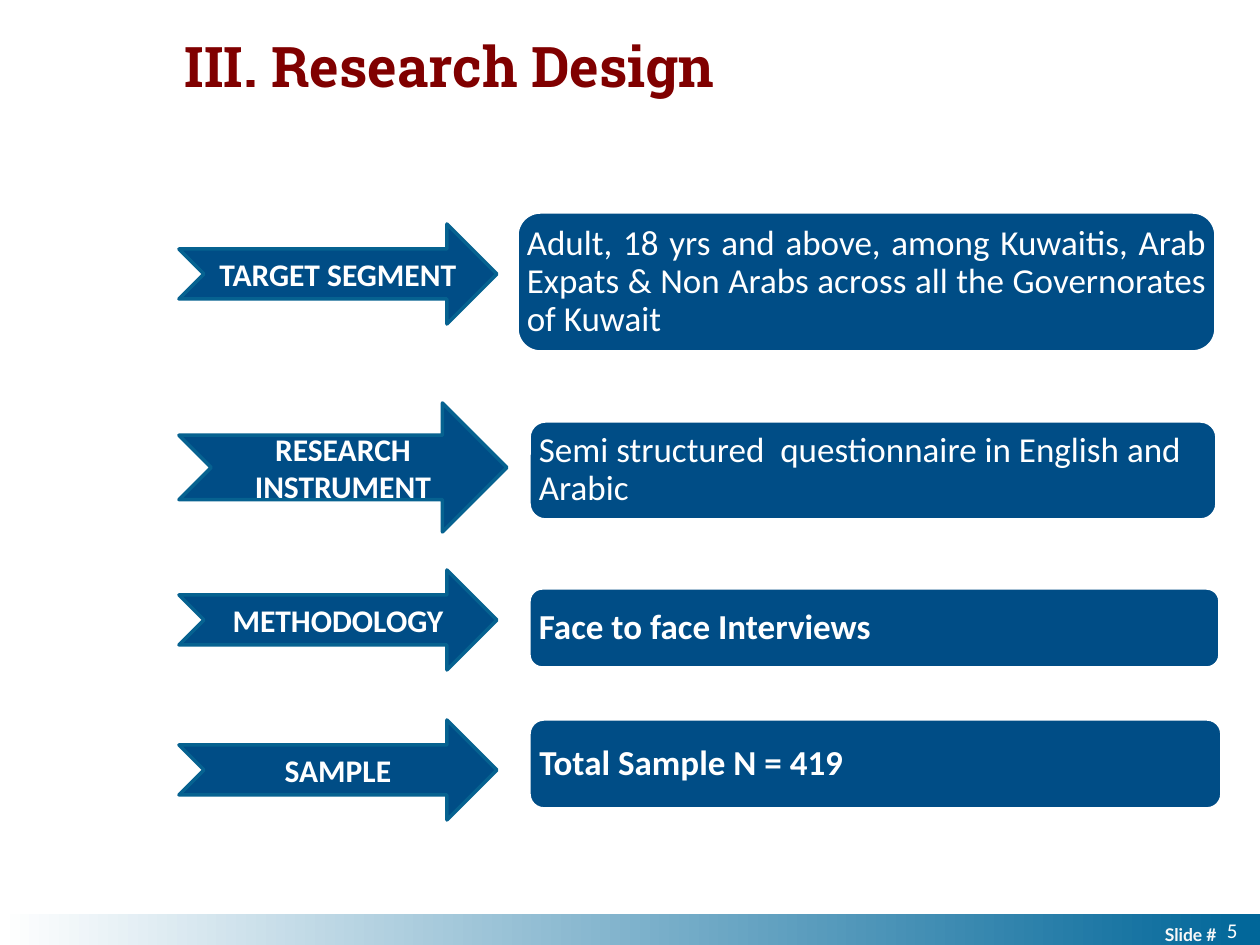
from lxml import etree
from pptx import Presentation
from pptx import util as u
from pptx.dml.color import RGBColor
from pptx.enum import shapes, text
from pptx.oxml.ns import qn

WHITE = RGBColor(255, 255, 255)
PALE = RGBColor(0xF8, 0xF8, 0xF8)
NAVY = RGBColor(0x00, 0x4D, 0x86)
EDGE = RGBColor(0x06, 0x62, 0x90)
TEAL = RGBColor(0x00, 0x66, 0x99)
RED = RGBColor(0x80, 0, 0)
SCALE = 914400 / 126
SHAPE = shapes.MSO_SHAPE
ALIGN = text.PP_ALIGN
MID = text.MSO_ANCHOR.MIDDLE
BASE = text.MSO_ANCHOR.BOTTOM
TOP = text.MSO_ANCHOR.TOP

ROWS = [
    ((179, 224, 318, 100), "TARGET SEGMENT", (517, 212, 699, 140),
     "Adult, 18 yrs and above, among Kuwaitis, Arab Expats & Non Arabs "
     "across all the Governorates of Kuwait", False, ALIGN.JUSTIFY),
    ((179, 403, 328, 129), "RESEARCH INSTRUMENT", (529, 421, 688, 99),
     "Semi structured  questionnaire in English and Arabic", False, ALIGN.LEFT),
    ((179, 570, 318, 100), "METHODOLOGY", (529, 588, 691, 80),
     "Face to face Interviews", True, ALIGN.LEFT),
    ((179, 720, 318, 100), "SAMPLE", (529, 719, 693, 90),
     "Total Sample N = 419", True, ALIGN.LEFT),
]


def px(n):
    return u.Emu(round(n * SCALE))


def write(shape, words, size, color, align, bold=False, face="Calibri",
          anchor=MID, wrap=True):
    frame = shape.text_frame
    frame.word_wrap = wrap
    frame.vertical_anchor = anchor
    para = frame.paragraphs[0]
    para.text = words
    para.alignment = align
    font = para.font
    font.name, font.size, font.bold = face, u.Pt(size), bold
    font.color.rgb = color
    return para


def block(slide, kind, box, line):
    shape = slide.shapes.add_shape(kind, *map(px, box))
    shape.shadow.inherit = False
    shape.fill.solid()
    shape.fill.fore_color.rgb = NAVY
    shape.line.color.rgb = line
    shape.line.width = u.Pt(2)
    return shape


def label(slide, box, *words, **style):
    shape = slide.shapes.add_textbox(*map(px, box))
    return shape, write(shape, *words, **style)


def title(slide, box):
    _, para = label(slide, box, "III. Research Design", 32, RED, ALIGN.CENTER,
                    bold=True, face="Roboto Slab", anchor=TOP)
    props = para.runs[0].font._element if hasattr(para.runs[0].font, "_element") \
        else para.runs[0]._r.get_or_add_rPr()
    glow = etree.SubElement(props, qn("a:effectLst"))
    cast = etree.SubElement(glow, qn("a:outerShdw"), dist="38100", dir="2700000")
    etree.SubElement(cast, qn("a:srgbClr"), val="EEECE1")


def row(slide, arrow, name, panel, words, bold, align):
    shape = block(slide, SHAPE.NOTCHED_RIGHT_ARROW, arrow, EDGE)
    write(shape, name, 18, WHITE, ALIGN.CENTER, bold=True)
    shape = block(slide, SHAPE.ROUNDED_RECTANGLE, panel, WHITE)
    para = write(shape, words, 20, WHITE, align, bold=bold)
    para.line_spacing = 0.9
    frame = shape.text_frame
    inset = px(10 - round(panel[3] * 0.05))
    frame.margin_left = frame.margin_right = inset
    frame.margin_top = frame.margin_bottom = inset


def footer(slide, box):
    left, top, width, height = box
    bar = slide.shapes.add_shape(SHAPE.RECTANGLE, *map(px, box))
    bar.shadow.inherit = False
    bar.line.fill.background()
    bar.fill.gradient()
    bar.fill.gradient_angle = 0
    for stop, color in zip(bar.fill.gradient_stops, (WHITE, TEAL)):
        stop.color.rgb = color
    shape, _ = label(slide, (left + width - 441, top, 410, height), "Slide #",
                     10, PALE, ALIGN.RIGHT, bold=True, face="Lato",
                     anchor=BASE, wrap=False)
    shape.text_frame.margin_top = shape.text_frame.margin_bottom = 0
    label(slide, (left + width - 100, top, 90, height + 1), "5", 12, WHITE,
          ALIGN.RIGHT)


def main():
    deck = Presentation()
    deck.slide_width, deck.slide_height = px(1260), px(945)
    slide = deck.slides.add_slide(deck.slide_layouts[6])
    footer(slide, (0, 914, 1260, 31))
    for item in ROWS:
        row(slide, *item)
    title(slide, (85, 25, 730, 81))
    deck.save("out.pptx")


if __name__ == "__main__":
    main()
